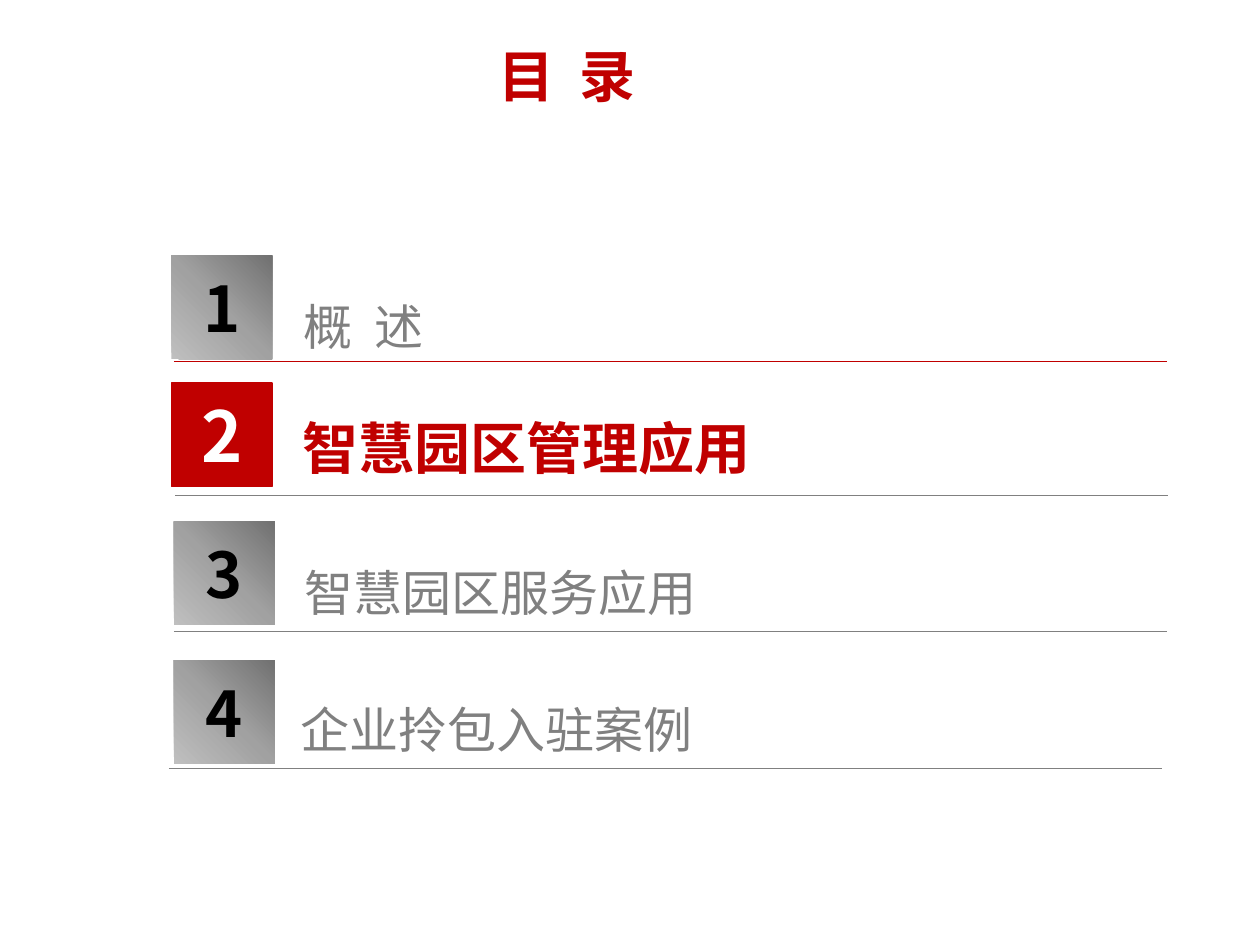
from pptx import Presentation
from pptx.dml.color import RGBColor
from pptx.enum import shapes, text
from pptx.oxml import parse_xml
from pptx.oxml.ns import nsdecls, qn
from pptx.util import Inches, Pt

THEME = dict(
    font="Noto Sans CJK SC", red="C00000", grey="808080", black="000000",
    white="FFFFFF", shade=[(0, "717171"), (50, "A1A1A1"), (100, "BFBFBF")],
    title=32, label=28, active=32, number=36, active_number=40, rule=0.75,
)
TITLE = "目  录"
ACTIVE = 2
BOX_W, BOX_H = 0.8, 0.82
LABEL_W, RULE_W = 6.08, 7.88

# label, number box (left, top), label (left, top, height), rule (left, y, colour)
ITEMS = [
    ("概  述", (1.36, 2.03), (2.31, 2.11, 0.72), (1.38, 2.87, "red")),
    ("智慧园区管理应用", (1.36, 3.04), (2.3, 3.01, 0.81), (1.39, 3.93, "grey")),
    ("智慧园区服务应用", (1.38, 4.14), (2.32, 4.22, 0.72), (1.38, 5.01, "grey")),
    ("企业拎包入驻案例", (1.38, 5.24), (2.29, 5.31, 0.72), (1.34, 6.1, "grey")),
]


def rgb(name):
    return RGBColor.from_string(THEME[name])


def write(frame, words, size, color, bold=False, align=None, spacing=None):
    frame.text = words
    frame.vertical_anchor = text.MSO_ANCHOR.MIDDLE
    para = frame.paragraphs[0]
    para.alignment = align
    para.line_spacing = spacing
    font = para.runs[0].font
    font.size, font.bold = Pt(THEME[size]), bold
    font.color.rgb = rgb(color)
    font.name = THEME["font"]
    east = parse_xml(f'<a:ea {nsdecls("a")} typeface="{THEME["font"]}"/>')
    font._element.find(qn("a:latin")).addnext(east)


def shade(shape):
    """Fill with a radial gradient that starts in the top right corner."""
    stops = "".join(
        f'<a:gs pos="{pos * 1000}"><a:srgbClr val="{color}"/></a:gs>'
        for pos, color in THEME["shade"])
    shape.fill.background()
    blank = shape._element.spPr.find(qn("a:noFill"))
    blank.addnext(parse_xml(
        f'<a:gradFill {nsdecls("a")} rotWithShape="1"><a:gsLst>{stops}</a:gsLst>'
        '<a:path path="circle"><a:fillToRect l="100000" b="100000"/></a:path>'
        '</a:gradFill>'))
    blank.getparent().remove(blank)


def add_label(slide, words, place, active):
    left, top, height = map(Inches, place)
    box = slide.shapes.add_textbox(left, top, Inches(LABEL_W), height)
    frame = box.text_frame
    frame.word_wrap = True
    frame.auto_size = text.MSO_AUTO_SIZE.SHAPE_TO_FIT_TEXT
    write(frame, words, "active" if active else "label",
          "red" if active else "grey", active, spacing=1.5)


def add_rule(slide, left, y, color):
    line = slide.shapes.add_connector(
        shapes.MSO_CONNECTOR.STRAIGHT,
        Inches(left), Inches(y), Inches(left + RULE_W), Inches(y))
    line.line.color.rgb = rgb(color)
    line.line.width = Pt(THEME["rule"])
    line._element.spPr.append(parse_xml(f'<a:effectLst {nsdecls("a")}/>'))


def add_number(slide, number, place, active):
    left, top = map(Inches, place)
    box = slide.shapes.add_shape(
        shapes.MSO_SHAPE.RECTANGLE, left, top, Inches(BOX_W), Inches(BOX_H))
    box.shadow.inherit = False
    if active:
        box.fill.solid()
        box.fill.fore_color.rgb = rgb("red")
        box.line.color.rgb = rgb("red")
        box.line.width = Pt(THEME["rule"])
    else:
        shade(box)
        box.line.fill.background()
    frame = box.text_frame
    frame.word_wrap = False
    frame.margin_left = frame.margin_right = 0
    frame.margin_top = frame.margin_bottom = 0
    write(frame, str(number), "active_number" if active else "number",
          "white" if active else "black", True, text.PP_ALIGN.CENTER)


def main():
    deck = Presentation()
    deck.slide_width, deck.slide_height = Inches(10), Inches(7.5)
    slide = deck.slides.add_slide(deck.slide_layouts.get_by_name("Title Only"))
    title = slide.shapes.title
    title.left, title.top = Inches(0), Inches(-0.03)
    title.width, title.height = Inches(9), Inches(1.25)
    write(title.text_frame, TITLE, "title", "red", True, text.PP_ALIGN.CENTER)
    for number, (words, box, label, rule) in enumerate(ITEMS, 1):
        active = number == ACTIVE
        add_label(slide, words, label, active)
        add_rule(slide, *rule)
        add_number(slide, number, box, active)
    deck.save("out.pptx")


if __name__ == "__main__":
    main()
